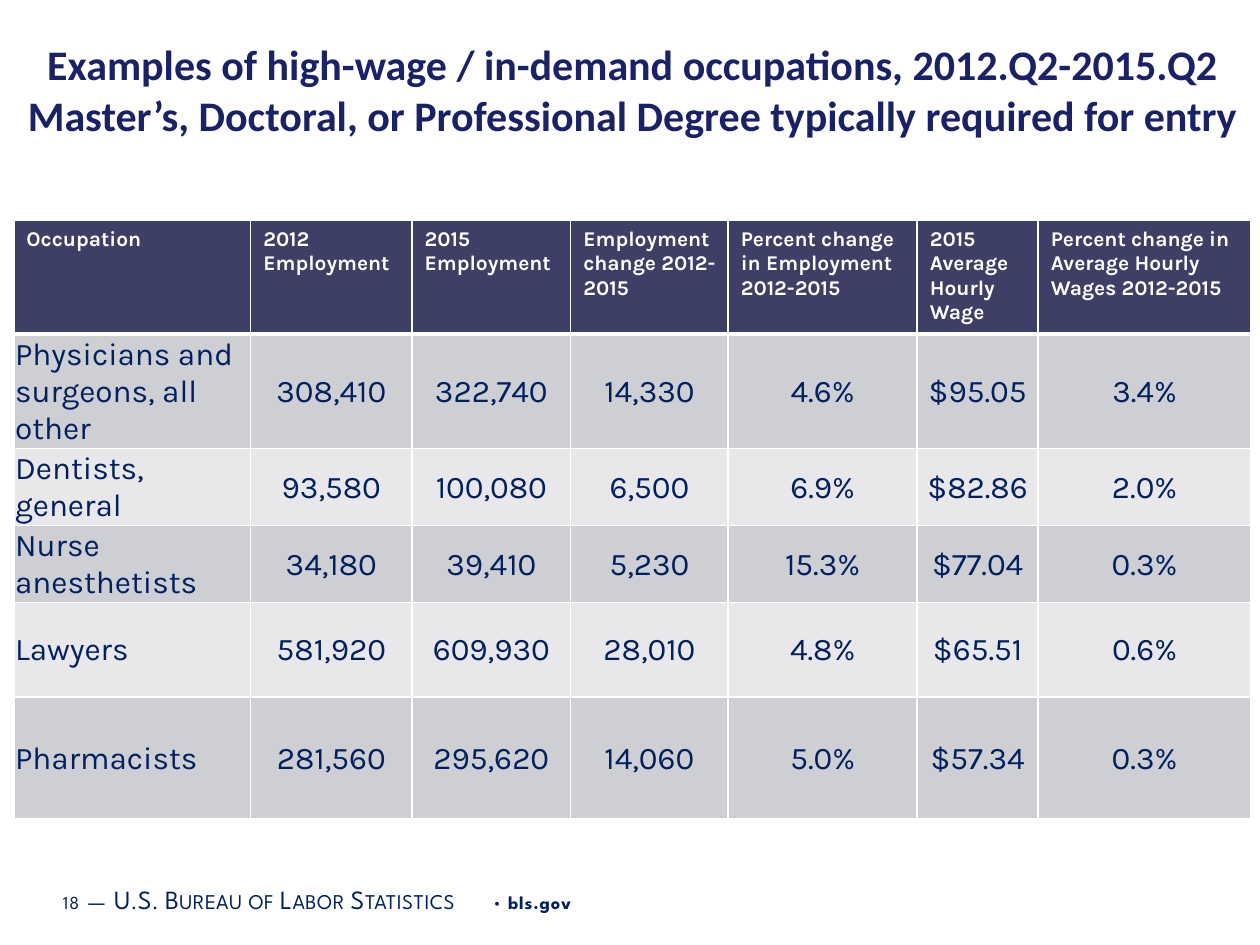
from lxml import etree
from pptx import Presentation
from pptx.dml.color import RGBColor
from pptx.enum import text
from pptx.oxml import ns
from pptx.util import Inches, Pt

COLORS = {"title": "192168", "body": "002060", "header": "3E3F67",
          "odd": "CECFD3", "even": "E8E8EB", "white": "FFFFFF"}

TITLE = ["Examples of high-wage / in-demand occupations, 2012.Q2-2015.Q2",
         "Master’s, Doctoral, or Professional Degree typically required for entry"]

# One list of paragraphs per heading
HEADINGS = [["Occupation"], ["2012 Employment"], ["2015", "Employment"],
            ["Employment change 2012-2015"],
            ["Percent change in Employment", "2012-2015"],
            ["2015 Average Hourly Wage"],
            ["Percent change in Average Hourly Wages 2012-2015"]]
OCCUPATIONS = [
    ("Physicians and surgeons, all other", "308,410", "322,740", "14,330", "4.6%", "$95.05", "3.4%"),
    ("Dentists, general", "93,580", "100,080", "6,500", "6.9%", "$82.86", "2.0%"),
    ("Nurse anesthetists", "34,180", "39,410", "5,230", "15.3%", "$77.04", "0.3%"),
    ("Lawyers", "581,920", "609,930", "28,010", "4.8%", "$65.51", "0.6%"),
    ("Pharmacists", "281,560", "295,620", "14,060", "5.0%", "$57.34", "0.3%"),
]
COLUMN_WIDTHS = [1.88, 1.28, 1.26, 1.25, 1.5, 0.96, 1.69]
ROW_HEIGHTS = [0.86, 0.86, 0.51, 0.58, 0.75, 0.97]

# text, size, letter spacing in points, small caps, bold
FOOTER = [("18", 10.5, 0.5, False, False),
          (" ", 16, 0.5, False, False),
          ("—", 15, 0.3, True, False),
          (" ", 16, 0.5, False, False),
          ("U.S. Bureau of Labor Statistics", 15, 0.3, True, False),
          (" ", 10.5, 9, False, False),
          ("• ", 10.5, 0.5, False, False),
          ("bls.gov", 10.5, 0.5, False, True)]


def rgb(name):
    return RGBColor.from_string(COLORS[name])


def add_run(paragraph, words, size, font, color, bold=False):
    run = paragraph.add_run()
    run.text = words
    run.font.size = Pt(size)
    run.font.name = font
    run.font.bold = bold
    run.font.color.rgb = rgb(color)
    return run


def set_margins(holder, left, top, right, bottom):
    holder.margin_left, holder.margin_top = Inches(left), Inches(top)
    holder.margin_right, holder.margin_bottom = Inches(right), Inches(bottom)


def add_text_frame(slide, box, anchor, margins):
    frame = slide.shapes.add_textbox(*map(Inches, box)).text_frame
    frame.word_wrap = True
    frame.vertical_anchor = anchor
    set_margins(frame, *margins)
    return frame


def paragraphs(frame, count):
    return [frame.paragraphs[0]] + [frame.add_paragraph() for _ in range(count - 1)]


def set_borders(cell, **widths):
    """Draw white edges; widths are points keyed by L, R, T and B in that order."""
    properties = cell._tc.get_or_add_tcPr()
    for side, width in widths.items():
        line = etree.SubElement(properties, ns.qn(f"a:ln{side}"), w=str(Pt(width)))
        fill = etree.SubElement(line, ns.qn("a:solidFill"))
        etree.SubElement(fill, ns.qn("a:srgbClr"), val=COLORS["white"])


def add_title(slide):
    frame = add_text_frame(slide, (0.11, 0.26, 9.82, 0.88),
                           text.MSO_ANCHOR.TOP, (0.05, 0.05, 0.05, 0.05))
    for paragraph, line in zip(paragraphs(frame, len(TITLE)), TITLE):
        paragraph.alignment = text.PP_ALIGN.CENTER
        add_run(paragraph, line, 24, "Calibri", "title", bold=True)


def add_occupation_table(slide):
    rows = [HEADINGS] + [[[value] for value in row] for row in OCCUPATIONS]
    table = slide.shapes.add_table(
        len(rows), len(HEADINGS), Inches(0.11), Inches(1.75),
        Inches(sum(COLUMN_WIDTHS)), Inches(sum(ROW_HEIGHTS))).table
    for column, width in zip(table.columns, COLUMN_WIDTHS):
        column.width = Inches(width)
    for row, height in zip(table.rows, ROW_HEIGHTS):
        row.height = Inches(height)

    for r, row in enumerate(rows):
        is_header = r == 0
        for c, lines in enumerate(row):
            cell = table.cell(r, c)
            set_borders(cell, L=1, R=1, T=3 if r == 1 else 1, B=3 if is_header else 1)
            cell.fill.solid()
            cell.fill.fore_color.rgb = rgb("header" if is_header else "odd" if r % 2 else "even")
            if not is_header:
                cell.vertical_anchor = text.MSO_ANCHOR.MIDDLE
                set_margins(cell, 0.01, 0.01, 0.01, 0)
            for paragraph, line in zip(paragraphs(cell.text_frame, len(lines)), lines):
                centred = not is_header and c > 0
                paragraph.alignment = text.PP_ALIGN.CENTER if centred else text.PP_ALIGN.LEFT
                add_run(paragraph, line, 12 if is_header else 18, "Karla",
                        "white" if is_header else "body", bold=is_header)


def add_footer(slide):
    frame = add_text_frame(slide, (0.43, 6.93, 6.33, 0.4),
                           text.MSO_ANCHOR.MIDDLE, (0.07, 0.04, 0.07, 0.04))
    for words, size, spacing, small_caps, bold in FOOTER:
        run = add_run(frame.paragraphs[0], words, size, "League Spartan", "body", bold)
        properties = run._r.get_or_add_rPr()
        properties.set("spc", str(round(spacing * 100)))
        if small_caps:
            properties.set("cap", "small")


def main():
    deck = Presentation()
    deck.slide_width, deck.slide_height = Inches(10), Inches(7.5)
    slide = deck.slides.add_slide(deck.slide_layouts[6])
    add_footer(slide)
    add_title(slide)
    add_occupation_table(slide)
    deck.save("out.pptx")


if __name__ == "__main__":
    main()
